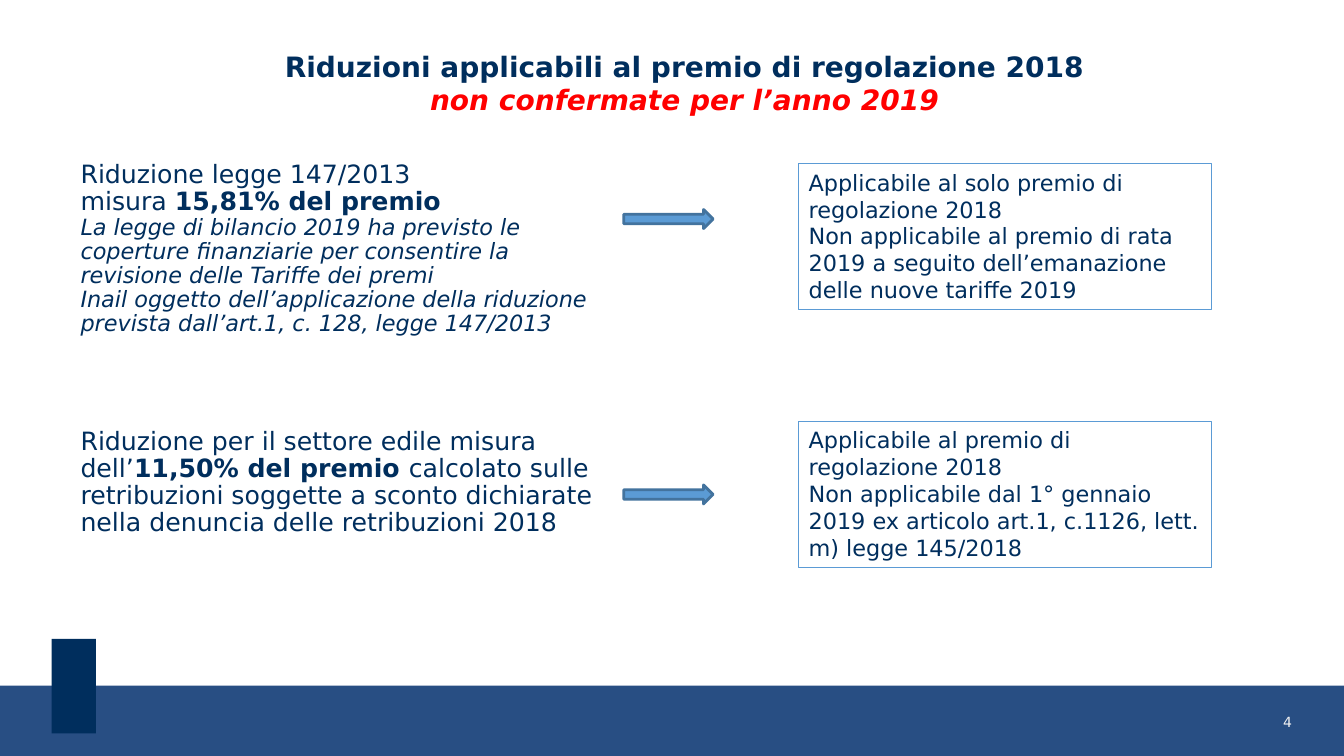
from pptx import Presentation
from pptx.dml.color import RGBColor
from pptx.enum.shapes import MSO_SHAPE as Shape
from pptx.enum.text import MSO_ANCHOR as Anchor, PP_ALIGN as Align
from pptx.util import Cm, Pt

COLORS = {
    "navy": "002E5D",
    "band": "284E83",
    "red": "FF0000",
    "pale": "F2F2F2",
    "blue": "5B9BD5",
    "edge": "43739E",
}


class SlideBuilder:
    font_name = "DejaVu Sans"

    def __init__(self, slide):
        self.slide = slide

    def color(self, name):
        return RGBColor.from_string(COLORS[name])

    def fill_text(self, shape, paragraphs, align=Align.LEFT, spacing=1.0, inset=None):
        frame = shape.text_frame
        settings = {"word_wrap": True, "vertical_anchor": Anchor.TOP}
        if inset is not None:
            for side in ("left", "top", "right", "bottom"):
                settings[f"margin_{side}"] = Cm(inset)
        for name, value in settings.items():
            setattr(frame, name, value)
        for index, runs in enumerate(paragraphs):
            paragraph = frame.paragraphs[0] if index == 0 else frame.add_paragraph()
            for name, value in {"alignment": align, "line_spacing": spacing}.items():
                setattr(paragraph, name, value)
            for text, style in runs:
                self.add_run(paragraph, text, **style)

    def add_run(self, paragraph, text, size, color="navy", bold=False, italic=False):
        run = paragraph.add_run()
        run.text = text
        values = {"name": self.font_name, "size": Pt(size), "bold": bold, "italic": italic}
        for name, value in values.items():
            setattr(run.font, name, value)
        run.font.color.rgb = self.color(color)

    def add_text(self, box, paragraphs, **layout):
        shape = self.slide.shapes.add_textbox(*map(Cm, box))
        self.fill_text(shape, paragraphs, **layout)

    def add_shape(self, kind, box, fill=None, line=None, width=0.75):
        shape = self.slide.shapes.add_shape(kind, *map(Cm, box))
        shape.shadow.inherit = False
        if fill:
            shape.fill.solid()
            shape.fill.fore_color.rgb = self.color(fill)
        else:
            shape.fill.background()
        if line:
            shape.line.color.rgb = self.color(line)
            shape.line.width = Pt(width)
        else:
            shape.line.fill.background()
        return shape

    def add_outcome(self, box, sentences):
        shape = self.add_shape(Shape.RECTANGLE, box, line="blue")
        self.fill_text(shape, [[(sentence, {"size": 16})] for sentence in sentences])

    def add_arrow(self, box):
        self.add_shape(Shape.RIGHT_ARROW, box, fill="blue", line="edge", width=2)


BODY = {"size": 18}
STRONG = {"size": 18, "bold": True}
NOTE = {"size": 16, "italic": True}
TITLE = {"size": 20, "bold": True}

REDUCTIONS = [
    {
        "text_top": 3.94,
        "text_height": 4.8,
        "text": [
            [("Riduzione legge 147/2013", BODY)],
            [("misura ", BODY), ("15,81% del premio", STRONG)],
            [("La legge di bilancio 2019 ha previsto le coperture finanziarie per "
              "consentire la revisione delle Tariffe dei premi", NOTE)],
            [("Inail oggetto dell’applicazione della riduzione prevista "
              "dall’art.1, c. 128, legge 147/2013", NOTE)],
        ],
        "arrow_top": 5.28,
        "outcome_top": 4.13,
        "outcome": [
            "Applicabile al solo premio di regolazione 2018",
            "Non applicabile al premio di rata 2019 a seguito dell’emanazione "
            "delle nuove tariffe 2019",
        ],
    },
    {
        "text_top": 10.67,
        "text_height": 3.0,
        "text": [
            [("Riduzione per il settore edile misura dell’", BODY),
             ("11,50% del premio ", STRONG),
             ("calcolato sulle retribuzioni soggette a sconto dichiarate nella "
              "denuncia delle retribuzioni 2018", BODY)],
        ],
        "arrow_top": 12.22,
        "outcome_top": 10.62,
        "outcome": [
            "Applicabile al premio di regolazione 2018",
            "Non applicabile dal 1° gennaio 2019 ex articolo art.1, c.1126, "
            "lett. m) legge 145/2018",
        ],
    },
]


def main():
    presentation = Presentation()
    presentation.slide_width = Cm(33.87)
    presentation.slide_height = Cm(19.05)
    builder = SlideBuilder(presentation.slides.add_slide(presentation.slide_layouts[6]))

    builder.add_shape(Shape.RECTANGLE, (0, 17.28, 33.87, 1.77), fill="band")
    builder.add_shape(Shape.RECTANGLE, (1.3, 16.1, 1.12, 2.38), fill="navy")
    builder.add_text((28.52, 17.98, 4.04, 1.02), [[("4", {"size": 10, "color": "pale"})]],
                     align=Align.RIGHT, inset=0)
    builder.add_text((5.99, 1.12, 22.53, 1.96), [
        [("Riduzioni applicabili al premio di regolazione 2018", TITLE)],
        [("non confermate per l’anno 2019", {**TITLE, "color": "red", "italic": True})],
    ], align=Align.CENTER)

    for reduction in REDUCTIONS:
        builder.add_text((1.78, reduction["text_top"], 13.72, reduction["text_height"]),
                         reduction["text"], spacing=0.9)
        builder.add_outcome((20.13, reduction["outcome_top"], 10.41, 3.68),
                            reduction["outcome"])
        builder.add_arrow((15.72, reduction["arrow_top"], 2.25, 0.48))

    presentation.save("out.pptx")


if __name__ == "__main__":
    main()
